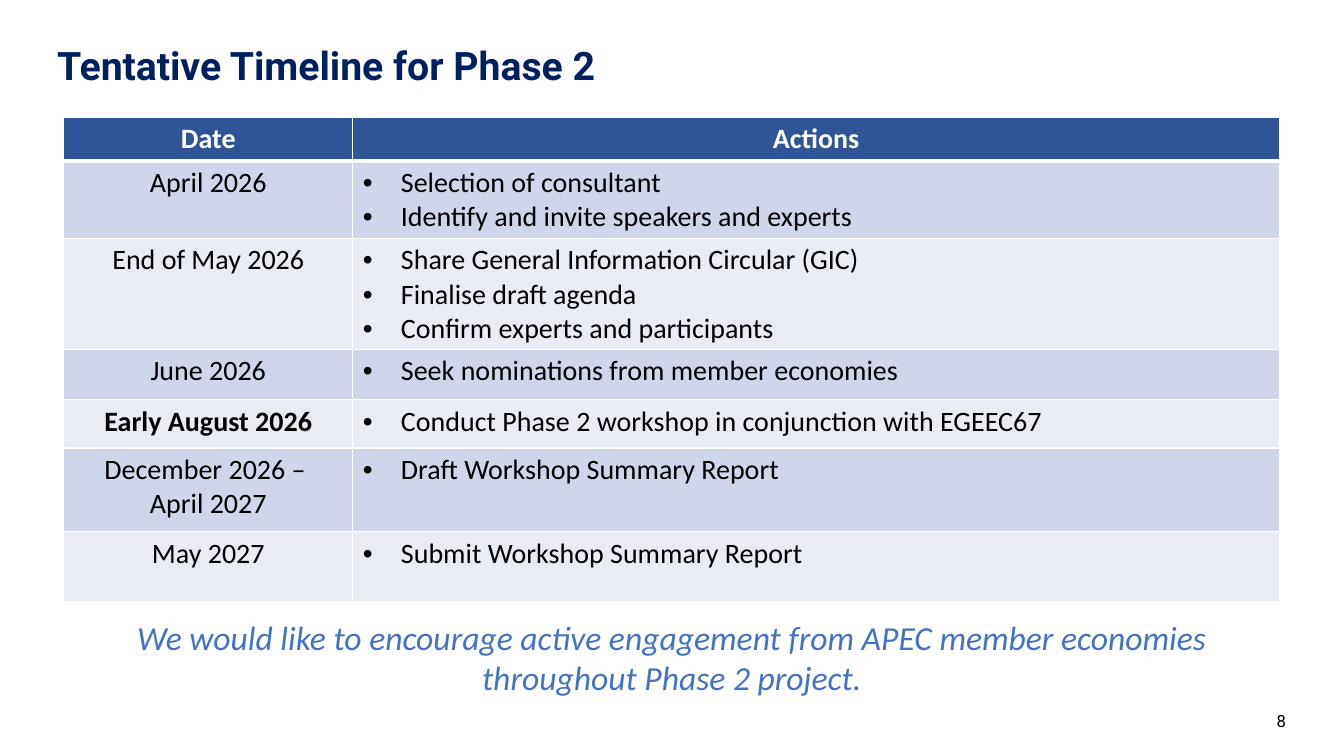
from lxml import etree
from pptx import Presentation
from pptx.dml.color import RGBColor
from pptx.enum.text import MSO_ANCHOR, PP_ALIGN
from pptx.oxml.ns import qn
from pptx.util import Cm, Pt

TITLE = "Tentative Timeline for Phase 2"
PAGE_NUMBER = "8"
CLOSING = ("We would like to encourage active engagement from APEC member "
           "economies throughout Phase 2 project.")
HEADINGS = ["Date", "Actions"]
TIMELINE = [
    (["April 2026"],
     ["Selection of consultant", "Identify and invite speakers and experts"]),
    (["End of May 2026"],
     ["Share General Information Circular (GIC)", "Finalise draft agenda",
      "Confirm experts and participants"]),
    (["June 2026"], ["Seek nominations from member economies"]),
    (["Early August 2026"],
     ["Conduct Phase 2 workshop in conjunction with EGEEC67"]),
    (["December 2026 – ", "April 2027"], ["Draft Workshop Summary Report"]),
    (["May 2027"], ["Submit Workshop Summary Report"]),
]
KEY_DATE = "Early August 2026"
COLUMN_WIDTHS = [7.28, 23.36]
ROW_HEIGHTS = [1.07, 1.93, 2.69, 1.27, 1.22, 2.11, 1.75]
BULLET_INDENT = Cm(0.96)

NAVY = RGBColor(0x00, 0x20, 0x60)
HEADER_BLUE = RGBColor(0x2F, 0x55, 0x97)
ACCENT_BLUE = RGBColor(0x44, 0x72, 0xC4)
BANDS = [RGBColor(0xCF, 0xD5, 0xEA), RGBColor(0xE9, 0xEB, 0xF5)]
WHITE = RGBColor(0xFF, 0xFF, 0xFF)
BLACK = RGBColor(0x00, 0x00, 0x00)
LEFT, CENTER, RIGHT = PP_ALIGN.LEFT, PP_ALIGN.CENTER, PP_ALIGN.RIGHT
TOP, MIDDLE, BOTTOM = MSO_ANCHOR.TOP, MSO_ANCHOR.MIDDLE, MSO_ANCHOR.BOTTOM


def add_span(para, text, font, size, color, bold=False, italic=False):
    span = para.add_run()
    span.text = text
    span.font.name = font
    span.font.size = Pt(size)
    span.font.color.rgb = color
    span.font.bold = bold
    span.font.italic = italic


def add_text(page, place, text, align, anchor, **style):
    box = page.shapes.add_textbox(*[Cm(length) for length in place])
    frame = box.text_frame
    frame.word_wrap = True
    frame.vertical_anchor = anchor
    para = frame.paragraphs[0]
    para.alignment = align
    add_span(para, text, **style)
    return para


def add_bullet(para):
    props = para._p.get_or_add_pPr()
    props.set("marL", str(BULLET_INDENT))
    props.set("indent", str(-BULLET_INDENT))
    etree.SubElement(props, qn("a:buFont")).set("typeface", "Arial")
    etree.SubElement(props, qn("a:buChar")).set("char", "•")


def set_borders(cell, top, bottom):
    props = cell._tc.get_or_add_tcPr()
    for side, width in {"L": 1, "R": 1, "T": top, "B": bottom}.items():
        line = etree.SubElement(props, qn("a:ln" + side), w=str(Pt(width)))
        fill = etree.SubElement(line, qn("a:solidFill"))
        etree.SubElement(fill, qn("a:srgbClr")).set("val", str(WHITE))


def fill_cell(cell, lines, row, bulleted):
    header = row == 0
    set_borders(cell, 3 if row == 1 else 1, 3 if header else 1)
    cell.fill.solid()
    cell.fill.fore_color.rgb = HEADER_BLUE if header else BANDS[(row - 1) % 2]
    frame = cell.text_frame
    for index, text in enumerate(lines):
        para = frame.add_paragraph() if index else frame.paragraphs[0]
        if bulleted:
            add_bullet(para)
        para.alignment = LEFT if bulleted else CENTER
        add_span(para, text, "Calibri", 20, WHITE if header else BLACK,
                 bold=header or text == KEY_DATE)


def add_timeline(page):
    rows = [[[heading] for heading in HEADINGS]] + TIMELINE
    table = page.shapes.add_table(
        len(rows), len(HEADINGS), Cm(1.61), Cm(2.95),
        Cm(sum(COLUMN_WIDTHS)), Cm(sum(ROW_HEIGHTS))).table
    for column, width in zip(table.columns, COLUMN_WIDTHS):
        column.width = Cm(width)
    for row, cells in enumerate(rows):
        table.rows[row].height = Cm(ROW_HEIGHTS[row])
        for column, lines in enumerate(cells):
            fill_cell(table.cell(row, column), lines, row,
                      bulleted=row > 0 and column == 1)


def main():
    deck = Presentation()
    deck.slide_width, deck.slide_height = Cm(33.87), Cm(19.05)
    page = deck.slides.add_slide(deck.slide_layouts[6])
    title = add_text(page, (1.19, 0.86, 31.47, 1.5), TITLE, LEFT, BOTTOM,
                     font="Roboto", size=28, color=NAVY, bold=True)
    title.line_spacing = 0.9
    add_text(page, (25.04, 17.65, 7.62, 1.02), PAGE_NUMBER, RIGHT, MIDDLE,
             font="Roboto", size=12, color=BLACK)
    add_timeline(page)
    add_text(page, (1.73, 15.42, 30.4, 2.31), CLOSING, CENTER, TOP,
             font="Calibri", size=24, color=ACCENT_BLUE, italic=True)
    deck.save("out.pptx")


if __name__ == "__main__":
    main()
